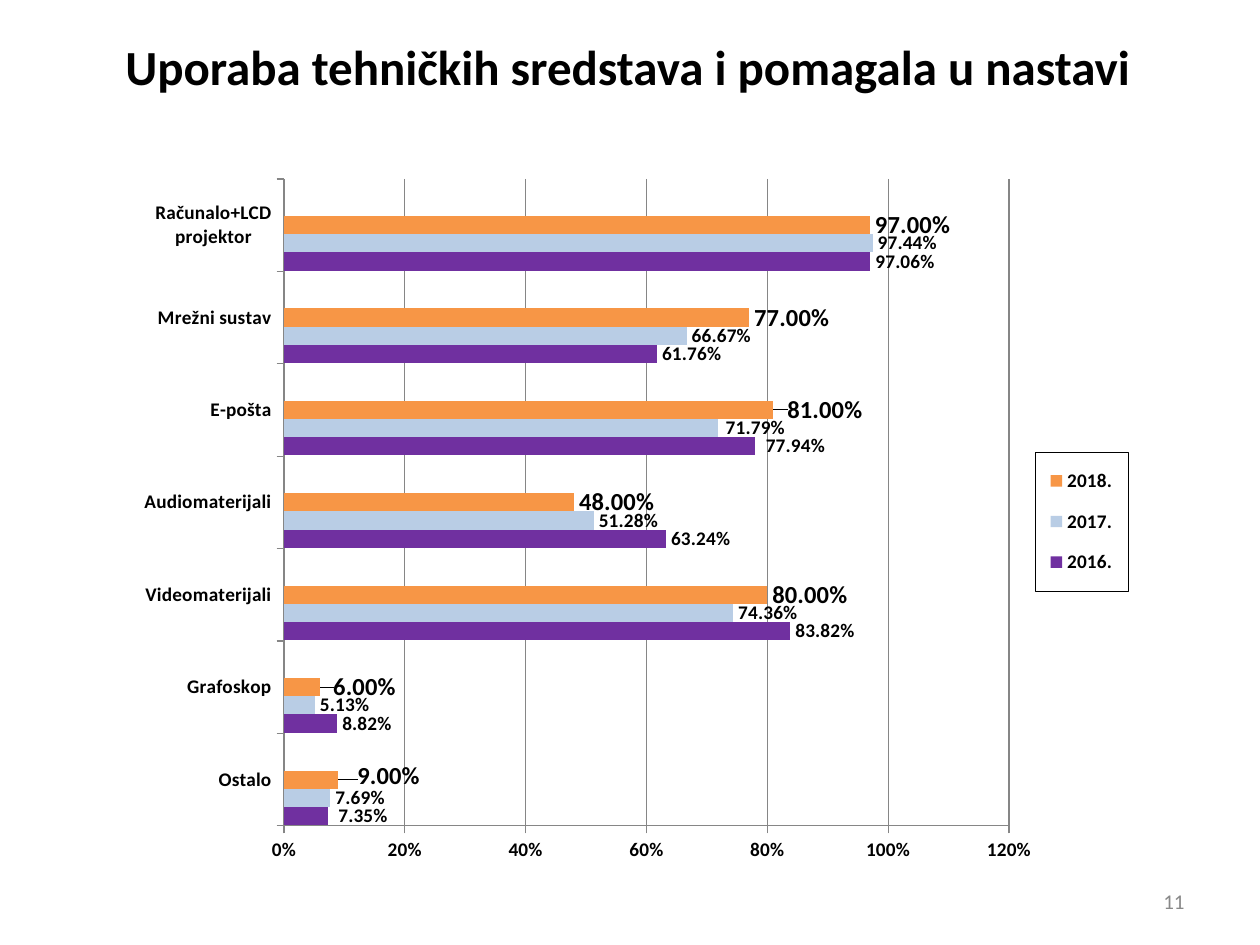
from lxml import etree
from pptx import Presentation
from pptx.chart.data import CategoryChartData
from pptx.dml.color import RGBColor
from pptx.enum.chart import XL_CHART_TYPE, XL_LABEL_POSITION, XL_LEGEND_POSITION, XL_TICK_MARK
from pptx.enum.text import MSO_ANCHOR, PP_ALIGN
from pptx.oxml import parse_xml
from pptx.oxml.ns import nsdecls, qn
from pptx.util import Emu, Pt

BLACK = RGBColor(0x00, 0x00, 0x00)
WHITE = RGBColor(0xFF, 0xFF, 0xFF)
GREY = RGBColor(0x89, 0x89, 0x89)
AXIS_GREY = RGBColor(0x86, 0x86, 0x86)
PURPLE = RGBColor(0x70, 0x30, 0xA0)
PALE_BLUE = RGBColor(0xB9, 0xCD, 0xE5)
ORANGE = RGBColor(0xF7, 0x96, 0x46)
GREEN = RGBColor(0xC3, 0xD6, 0x9B)

FONT = "Calibri"
PERCENT = "0.00%"
CATEGORIES = ["Ostalo", "Grafoskop", "Videomaterijali", "Audiomaterijali",
              "E-pošta", "Mrežni sustav", "Računalo+LCD projektor"]
EMPTY = [None] * len(CATEGORIES)
# name, values, colour, label size, label shifts in px by category index
SERIES = [
    ("2016.", [0.0735, 0.0882, 0.8382, 0.6324, 0.7794, 0.6176, 0.9706],
     PURPLE, 11, {0: (5, 0), 4: (6, 0)}),
    ("2017.", [0.0769, 0.0513, 0.7436, 0.5128, 0.7179, 0.6667, 0.9744],
     PALE_BLUE, 11, {4: (3, 0)}),
    ("2018.", [0.09, 0.06, 0.8, 0.48, 0.81, 0.77, 0.97],
     ORANGE, 14, {0: (14, -4), 1: (8, 0), 4: (9, 0)}),
    # Two empty series keep the space above each group of bars
    ("", EMPTY, ORANGE, 11, {}),
    ("", EMPTY, GREEN, 11, {}),
]
NO_LEADER_LINES = (
    f'<c:extLst {nsdecls("c")}><c:ext uri="{{CE6537A1-D6FC-4f65-9D91-7224C49458BB}}"'
    ' xmlns:c15="http://schemas.microsoft.com/office/drawing/2012/chart">'
    '<c15:showLeaderLines val="0"/></c:ext></c:extLst>')


def px(length):
    return Emu(round(length * 914400 / 126))


def set_font(font, size, color=BLACK, bold=True):
    font.name, font.size, font.bold = FONT, Pt(size), bold
    font.color.rgb = color


def manual_layout(**values):
    layout = etree.Element(qn("c:layout"))
    manual = etree.SubElement(layout, qn("c:manualLayout"))
    for tag, value in values.items():
        etree.SubElement(manual, qn("c:" + tag)).set("val", str(value))
    return layout


def box_layout(box, chart_box, **target):
    """Place a chart part, given in page px, as fractions of the chart box."""
    left, top, width, height = chart_box
    return manual_layout(
        **target, xMode="edge", yMode="edge",
        x=round((box[0] - left) / width, 4), y=round((box[1] - top) / height, 4),
        w=round(box[2] / width, 4), h=round(box[3] / height, 4))


def place(shape, box):
    shape.left, shape.top, shape.width, shape.height = map(px, box)


def add_title(page, box):
    title = page.shapes.title
    place(title, box)
    title.fill.solid()
    title.fill.fore_color.rgb = WHITE
    frame = title.text_frame
    frame.text = "Uporaba tehničkih sredstava i pomagala u nastavi"
    frame.vertical_anchor = MSO_ANCHOR.MIDDLE
    para = frame.paragraphs[0]
    para.alignment = PP_ALIGN.CENTER
    set_font(para.runs[0].font, 28)


def add_page_number(page, box):
    frame = page.shapes.add_textbox(*map(px, box)).text_frame
    frame.word_wrap = True
    frame.vertical_anchor = MSO_ANCHOR.MIDDLE
    frame.text = "11"
    para = frame.paragraphs[0]
    para.alignment = PP_ALIGN.RIGHT
    set_font(para.runs[0].font, 12, GREY, False)


def style_axis(axis):
    axis.major_tick_mark = XL_TICK_MARK.OUTSIDE
    axis.minor_tick_mark = XL_TICK_MARK.NONE
    axis.format.line.color.rgb = AXIS_GREY
    axis.format.line.width = Pt(0.75)
    set_font(axis.tick_labels.font, 11)


def style_series(series, color, size, shifts, chart_box):
    series.format.fill.solid()
    series.format.fill.fore_color.rgb = color
    series.invert_if_negative = False
    labels = series.data_labels
    labels.show_value = True
    labels.number_format = PERCENT
    labels.number_format_is_linked = False
    labels.position = XL_LABEL_POSITION.OUTSIDE_END
    set_font(labels.font, size)
    # Shifted labels
    for index in shifts:
        label = series.points[index].data_label
        set_font(label.font, size)
        label.position = XL_LABEL_POSITION.OUTSIDE_END
    for item in labels._element.findall(qn("c:dLbl")):
        right, down = shifts[int(item.find(qn("c:idx")).get("val"))]
        item.insert(1, manual_layout(x=round(right / chart_box[2], 4),
                                     y=round(down / chart_box[3], 4)))
        item.insert(2, parse_xml(
            f'<c:numFmt {nsdecls("c")} formatCode="{PERCENT}" sourceLinked="0"/>'))
    labels._element.append(parse_xml(NO_LEADER_LINES))


def style_legend(chart, box, chart_box):
    chart.has_legend = True
    legend = chart.legend
    legend.position = XL_LEGEND_POSITION.RIGHT
    legend.include_in_layout = False
    set_font(legend.font, 11)
    element = legend._element
    for old in element.findall(qn("c:layout")):
        element.remove(old)
    # The empty series head the list, which runs from the last series up
    for index in range(2):
        element.insert(1 + index, parse_xml(
            f'<c:legendEntry {nsdecls("c")}><c:idx val="{index}"/>'
            '<c:delete val="1"/></c:legendEntry>'))
    element.insert(3, box_layout(box, chart_box))
    element.find(qn("c:txPr")).addprevious(parse_xml(
        f'<c:spPr {nsdecls("c", "a")}><a:ln w="3175"><a:solidFill>'
        f'<a:srgbClr val="{BLACK}"/></a:solidFill></a:ln></c:spPr>'))


def add_usage_chart(page, box):
    left, top = box[:2]
    data = CategoryChartData(number_format=PERCENT)
    data.categories = CATEGORIES
    for name, values, *_ in SERIES:
        data.add_series(name, values)
    chart = page.shapes.add_chart(
        XL_CHART_TYPE.BAR_CLUSTERED, *map(px, box), data).chart
    set_font(chart.font, 10, bold=False)
    chart.has_title = False

    # Bars and labels
    plot = chart.plots[0]
    plot.gap_width = 8
    plot.overlap = 0
    plot.vary_by_categories = False
    for series, (_, _, color, size, shifts) in zip(plot.series, SERIES):
        style_series(series, color, size, shifts, box)

    # Axes
    style_axis(chart.category_axis)
    axis = chart.value_axis
    style_axis(axis)
    axis.minimum_scale, axis.maximum_scale, axis.major_unit = 0, 1.2, 0.2
    axis.tick_labels.number_format = "0%"
    axis.tick_labels.number_format_is_linked = False
    axis.has_major_gridlines = True
    axis.major_gridlines.format.line.color.rgb = AXIS_GREY
    axis.major_gridlines.format.line.width = Pt(0.75)

    # Plot area and legend
    area = chart._chartSpace.chart.plotArea
    for old in area.findall(qn("c:layout")):
        area.remove(old)
    area.insert(0, box_layout((left + 161, top + 14, 725, 647), box,
                              layoutTarget="inner"))
    style_legend(chart, (left + 912, top + 287, 93, 139), box)


def main():
    deck = Presentation()
    deck.slide_width, deck.slide_height = px(1260), px(945)
    page = deck.slides.add_slide(deck.slide_layouts[5])
    add_title(page, (44, 30, 1167, 72))
    add_page_number(page, (903, 876, 294, 50))
    add_usage_chart(page, (123, 165, 1012, 711))
    deck.save("out.pptx")


if __name__ == "__main__":
    main()
